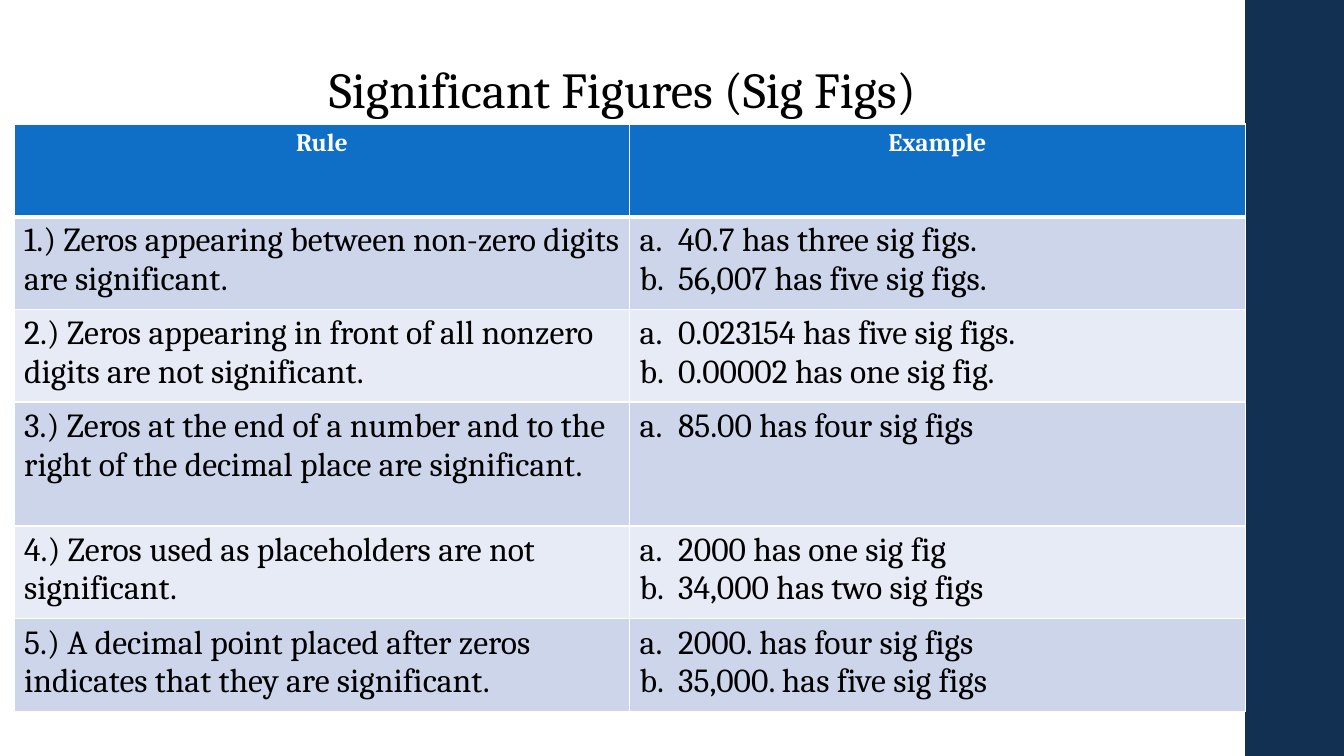
import pptx
import pptx.util
import pptx.dml.color
import pptx.enum.shapes
import pptx.enum.text
import pptx.oxml
import pptx.oxml.ns

HUES = {"navy": "113052", "blue": "0F6FC6", "odd": "CCD5EA",
        "even": "E7EBF5", "white": "FFFFFF", "black": "000000"}

RULES = [
    ("1.) Zeros appearing between non-zero digits are significant.",
     ["40.7 has three sig figs.", "56,007 has five sig figs."]),
    ("2.) Zeros appearing in front of all nonzero digits are not significant.",
     ["0.023154 has five sig figs.", "0.00002 has one sig fig."]),
    ("3.) Zeros at the end of a number and to the right of the decimal place are significant.",
     ["85.00 has four sig figs"]),
    ("4.) Zeros used as placeholders are not significant.",
     ["2000 has one sig fig", "34,000 has two sig figs"]),
    ("5.) A decimal point placed after zeros indicates that they are significant.",
     ["2000. has four sig figs", "35,000. has five sig figs"]),
]


def px(n):
    return pptx.util.Emu(n * 9144)


class Deck:
    """Holds the style and the current slide; lengths are px, 100 to the inch."""

    face = "Cambria"
    mid = pptx.enum.text.PP_ALIGN.CENTER

    def __init__(self, wide, high):
        self.prs = pptx.Presentation()
        self.prs.slide_width, self.prs.slide_height = px(wide), px(high)
        self.slide = self.prs.slides.add_slide(self.prs.slide_layouts[5])

    def hue(self, name):
        return pptx.dml.color.RGBColor.from_string(HUES[name])

    def style(self, par, size, color, bold=False, align=None):
        par.alignment = align
        font = par.font
        font.name, font.size, font.bold = self.face, pptx.util.Pt(size), bold
        font.color.rgb = self.hue(color)

    def title(self, text, *box):
        head = self.slide.shapes.title
        head.left, head.top, head.width, head.height = map(px, box)
        frame = head.text_frame
        frame.text = text
        frame.auto_size = pptx.enum.text.MSO_AUTO_SIZE.NONE
        frame.vertical_anchor = pptx.enum.text.MSO_ANCHOR.MIDDLE
        self.style(frame.paragraphs[0], 36, "black", align=self.mid)

    def band(self, color, *box):
        kind = pptx.enum.shapes.MSO_SHAPE.RECTANGLE
        bar = self.slide.shapes.add_shape(kind, *map(px, box))
        bar.shadow.inherit = False
        bar.fill.solid()
        bar.fill.fore_color.rgb = self.hue(color)
        bar.line.fill.background()

    def edge(self, cell, side, width):
        cell._tc.get_or_add_tcPr().append(pptx.oxml.parse_xml(
            f'<a:ln{side} {pptx.oxml.ns.nsdecls("a")} w="{pptx.util.Pt(width)}">'
            f'<a:solidFill><a:srgbClr val="{HUES["white"]}"/></a:solidFill></a:ln{side}>'))

    def letter(self, par):
        props = par._p.get_or_add_pPr()
        props.set("marL", str(px(38)))
        props.set("indent", str(-px(38)))
        props.append(pptx.oxml.parse_xml(
            f'<a:buAutoNum {pptx.oxml.ns.nsdecls("a")} type="alphaLcPeriod"/>'))

    def cell(self, cell, lines, fill, top, base, listed=False, **look):
        for side, width in zip("LRTB", (1, 1, top, base)):
            self.edge(cell, side, width)
        cell.fill.solid()
        cell.fill.fore_color.rgb = self.hue(fill)
        cell.text = "\n".join(lines)
        for par in cell.text_frame.paragraphs:
            if listed:
                self.letter(par)
            self.style(par, **look)

    def table(self, heads, rows, highs, *box):
        grid = self.slide.shapes.add_table(len(highs), len(heads), *map(px, box)).table
        for row, high in zip(grid.rows, highs):
            row.height = px(high)
        for col, text in enumerate(heads):
            self.cell(grid.cell(0, col), [text], "blue", 1, 3,
                      size=18, color="white", bold=True, align=self.mid)
        for num, (rule, cases) in enumerate(rows, 1):
            fill = "odd" if num % 2 else "even"
            top = 3 if num == 1 else 1
            for col, lines in enumerate(([rule], cases)):
                self.cell(grid.cell(num, col), lines, fill, top, 1,
                          listed=col == 1, size=24, color="black")


def main():
    deck = Deck(1333, 750)
    deck.band("navy", 1235, 0, 98, 750)
    deck.table(["Rule", "Example"], RULES, [92, 92, 92, 123, 92, 92],
               14, 123, 1221, 583)
    deck.title("Significant Figures (Sig Figs)", 0, 52, 1235, 71)
    deck.prs.save("out.pptx")


if __name__ == "__main__":
    main()
